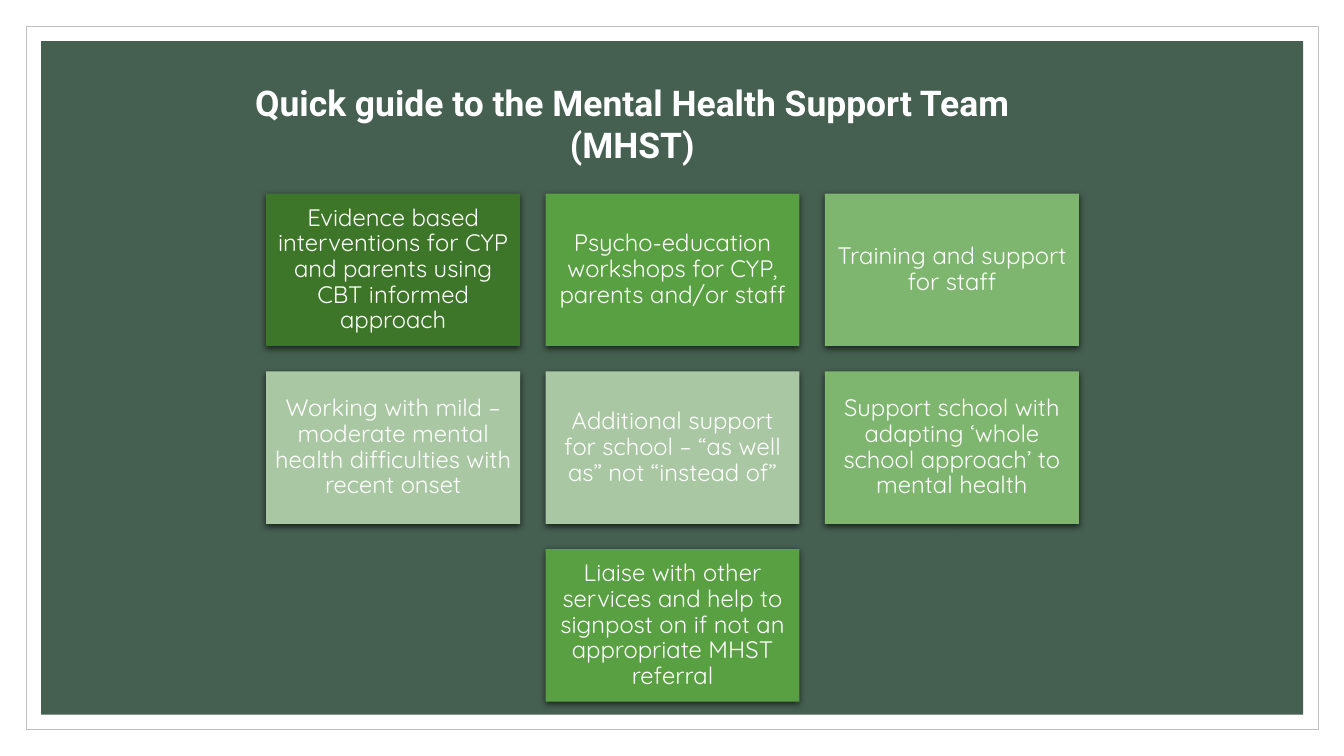
from lxml import etree
from pptx import Presentation
from pptx.dml.color import RGBColor
from pptx.enum import shapes, text
from pptx.oxml import parse_xml
from pptx.oxml.ns import nsdecls
from pptx.util import Cm, Pt

COLORS = {
    "white": "FFFFFF", "frame": "BFBFBF", "panel": "455F51", "shadow": "000000",
    "dark": "3D7628", "mid": "59A042", "light": "7EB66F", "pale": "A9C7A2",
}
CARD_ROWS = [
    [("Evidence based interventions for CYP and parents using CBT informed approach", "dark"),
     ("Psycho-education workshops for CYP, parents and/or staff", "mid"),
     ("Training and support for staff", "light")],
    [("Working with mild – moderate mental health difficulties with recent onset", "pale"),
     ("Additional support for school – “as well as” not “instead of”", "pale"),
     ("Support school with adapting ‘whole school approach’ to mental health", "light")],
    [("Liaise with other services and help to signpost on if not an appropriate MHST referral", "mid")],
]
COLUMNS = 3
GAP = 0.64


def rgb(name):
    return RGBColor.from_string(COLORS[name])


def add_rect(s, box, fill, line=None):
    sp = s.shapes.add_shape(shapes.MSO_SHAPE.RECTANGLE, *map(Cm, box))
    sp.shadow.inherit = False
    sp.fill.solid()
    sp.fill.fore_color.rgb = rgb(fill)
    if line:
        sp.line.color.rgb = rgb(line)
        sp.line.width = Pt(0.5)
    else:
        sp.line.fill.background()
    return sp


def set_text(sp, words, font, size, inset, spacing, bold=False):
    """Write one centred white paragraph in the middle of a shape."""
    tf = sp.text_frame
    tf.text = words
    tf.word_wrap = True
    tf.auto_size = text.MSO_AUTO_SIZE.NONE
    tf.vertical_anchor = text.MSO_ANCHOR.MIDDLE
    tf.margin_left = tf.margin_right = tf.margin_top = tf.margin_bottom = Cm(inset)
    p = tf.paragraphs[0]
    p.alignment = text.PP_ALIGN.CENTER
    p.line_spacing = spacing
    p.space_before = Pt(0)
    r = p.runs[0]
    r.font.name = font
    r.font.size = Pt(size)
    r.font.bold = bold
    r.font.color.rgb = rgb("white")


def add_shadow(sp):
    sp_pr = sp._element.spPr
    sp_pr.remove(sp_pr.find("{*}effectLst"))
    effects = parse_xml(f'<a:effectLst {nsdecls("a")}/>')
    shadow = etree.SubElement(
        effects, effects.tag.replace("effectLst", "outerShdw"),
        blurRad=str(Pt(4.5)), dist=str(Pt(1.5)), dir="5400000", algn="ctr", rotWithShape="0")
    color = etree.SubElement(
        shadow, effects.tag.replace("effectLst", "srgbClr"), val=COLORS["shadow"])
    etree.SubElement(color, effects.tag.replace("effectLst", "alpha"), val="63000")
    sp_pr.append(effects)


def add_backdrop(s, box):
    """Put the framed green panel behind the title."""
    x, y, w, h = box
    inset = 0.38
    frame = add_rect(s, box, "white", "frame")
    panel = add_rect(s, (x + inset, y + inset, w - 2 * inset, h - 2 * inset), "panel")
    for sp in (frame, panel):
        s.shapes.title._element.addprevious(sp._element)


def add_title(s, box):
    title = s.shapes.title
    title.left, title.top, title.width, title.height = map(Cm, box)
    set_text(title, "Quick guide to the Mental Health Support Team (MHST)",
             "Roboto", 25.3, 0.1, 1.0, bold=True)


def add_cards(s, box):
    """Fill the box with a grid of cards, centring a row that is not full."""
    x, y, w, h = box
    card_w = (w - GAP * (COLUMNS - 1)) / COLUMNS
    card_h = (h - GAP * (len(CARD_ROWS) - 1)) / len(CARD_ROWS)
    for i, row in enumerate(CARD_ROWS):
        indent = (COLUMNS - len(row)) * (card_w + GAP) / 2
        for j, (words, fill) in enumerate(row):
            left = x + indent + j * (card_w + GAP)
            sp = add_rect(s, (left, y + i * (card_h + GAP), card_w, card_h), fill)
            add_shadow(sp)
            set_text(sp, words, "Quicksand", 17, 0.18, 0.9)


def main():
    prs = Presentation()
    prs.slide_width, prs.slide_height = Cm(33.87), Cm(19.05)
    s = prs.slides.add_slide(prs.slide_layouts[5])
    add_backdrop(s, (0.66, 0.66, 32.56, 17.73))
    add_title(s, (5.18, 1.93, 21.51, 2.36))
    add_cards(s, (6.71, 4.88, 20.48, 12.8))
    prs.save("out.pptx")


if __name__ == "__main__":
    main()
